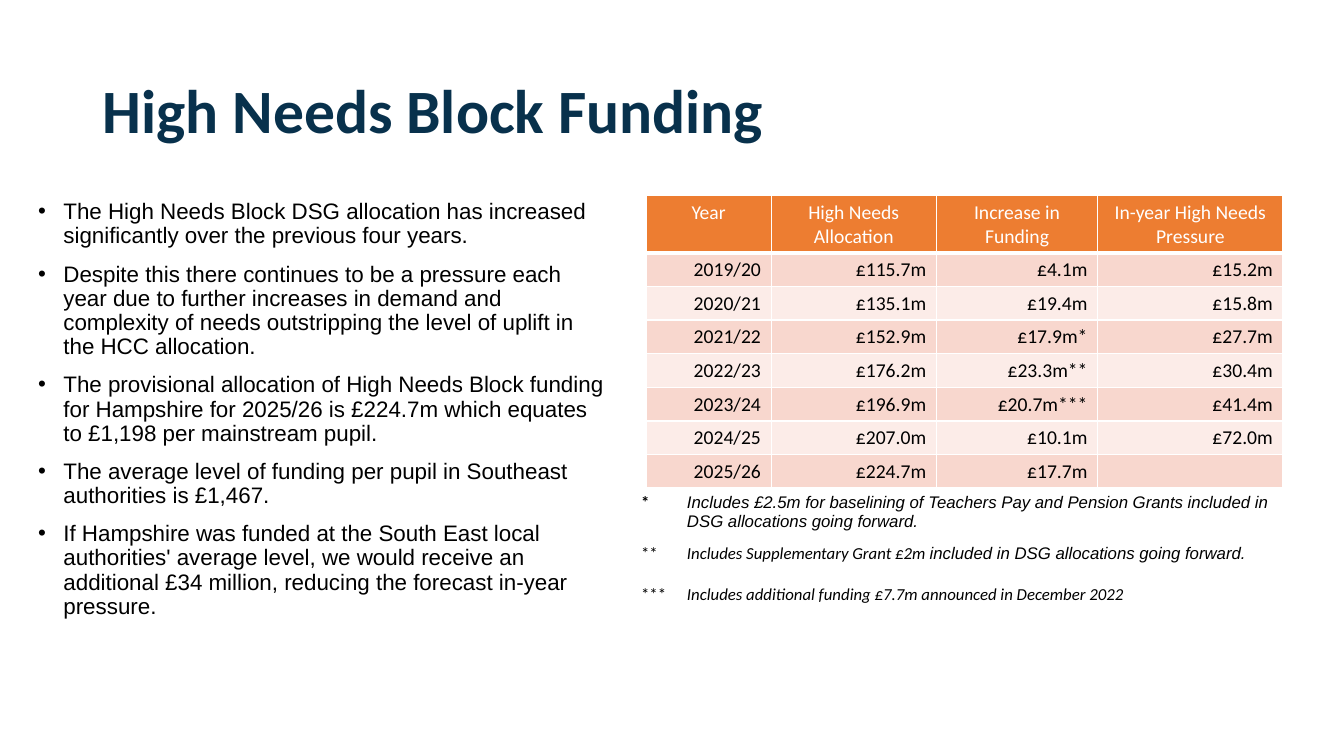
from dataclasses import dataclass

from lxml import etree
from pptx import Presentation
from pptx.dml.color import RGBColor
from pptx.enum import text as t
from pptx.oxml import ns
from pptx.util import Pt

NAVY = RGBColor(0x08, 0x31, 0x4C)
BLACK = RGBColor(0x00, 0x00, 0x00)
WHITE = RGBColor(0xFF, 0xFF, 0xFF)
ORANGE = RGBColor(0xED, 0x7D, 0x31)
BANDS = (RGBColor(0xF8, 0xD7, 0xCE), RGBColor(0xFC, 0xEC, 0xE8))


@dataclass
class Frame:
    left: float
    top: float
    width: float
    height: float

    def lengths(self):
        return [Pt(value) for value in (self.left, self.top, self.width, self.height)]


@dataclass
class Span:
    text: str
    font: str = "Calibri"
    bold: bool = False
    italic: bool = False


@dataclass
class Note:
    mark: Span
    spans: list[Span]


TITLE = Frame(66.2, 28.8, 828, 104.4)
BODY = Frame(20.2, 139.7, 419, 362.9)
FUNDING = Frame(461.5, 139.7, 455, 208.8)
NOTES = Frame(450.7, 348.5, 476, 86.4)

POINTS = [
    "The High Needs Block DSG allocation has increased significantly over the previous four years.",
    "Despite this there continues to be a pressure each year due to further increases in demand and "
    "complexity of needs outstripping the level of uplift in the HCC allocation.",
    "The provisional allocation of High Needs Block funding for Hampshire for 2025/26 is £224.7m "
    "which equates to £1,198 per mainstream pupil.",
    "The average level of funding per pupil in Southeast authorities is £1,467.",
    "If Hampshire was funded at the South East local authorities' average level, we would receive an "
    "additional £34 million, reducing the forecast in-year pressure.",
]
FUNDING_ROWS = [
    ("Year", "High Needs Allocation", "Increase in Funding", "In-year High Needs Pressure"),
    ("2019/20", "£115.7m", "£4.1m", "£15.2m"),
    ("2020/21", "£135.1m", "£19.4m", "£15.8m"),
    ("2021/22", "£152.9m", "£17.9m*", "£27.7m"),
    ("2022/23", "£176.2m", "£23.3m**", "£30.4m"),
    ("2023/24", "£196.9m", "£20.7m***", "£41.4m"),
    ("2024/25", "£207.0m", "£10.1m", "£72.0m"),
    ("2025/26", "£224.7m", "£17.7m", ""),
]
# Notes grouped by table row
NOTE_ROWS = [
    [Note(Span("*", bold=True),
          [Span("Includes £2.5m for baselining of Teachers Pay and Pension Grants included in "
                "DSG allocations going forward.", "Arial", italic=True)])],
    [Note(Span("**"),
          [Span("Includes Supplementary Grant £2m ", italic=True),
           Span("included in DSG allocations going forward.", "Arial", italic=True)]),
     Note(Span("***"),
          [Span("Includes additional funding £7.7m announced in December 2022", italic=True)])],
]


def set_values(target, values: dict) -> None:
    for name, value in values.items():
        setattr(target, name, value)


def add_span(para, span: Span, size: float, color: RGBColor) -> None:
    run = para.add_run()
    run.text = span.text
    set_values(run.font, {"name": span.font, "size": Pt(size),
                          "bold": span.bold, "italic": span.italic})
    run.font.color.rgb = color


def add_box(page, frame: Frame, anchor):
    box = page.shapes.add_textbox(*frame.lengths())
    set_values(box.text_frame, {"word_wrap": True, "vertical_anchor": anchor})
    return box.text_frame


def next_para(text_frame, index: int):
    return text_frame.add_paragraph() if index else text_frame.paragraphs[0]


def add_bullet(para) -> None:
    props = para._p.get_or_add_pPr()
    props.set("marL", str(Pt(18)))
    props.set("indent", str(-Pt(18)))
    etree.SubElement(props, ns.qn("a:buFont")).set("typeface", "Arial")
    etree.SubElement(props, ns.qn("a:buChar")).set("char", "•")


def set_borders(cell, bottom: float) -> None:
    props = cell._tc.get_or_add_tcPr()
    widths = {"a:lnL": 1, "a:lnR": 1, "a:lnT": 1, "a:lnB": bottom}
    for position, (tag, width) in enumerate(widths.items()):
        line = etree.Element(ns.qn(tag), w=str(Pt(width)))
        fill = etree.SubElement(line, ns.qn("a:solidFill"))
        etree.SubElement(fill, ns.qn("a:srgbClr")).set("val", str(WHITE))
        props.insert(position, line)


def add_grid(page, frame: Frame, widths: list[float], heights: list[float]):
    holder = page.shapes.add_table(len(heights), len(widths), *frame.lengths())
    grid = holder.table
    set_values(grid, {"first_row": False, "horz_banding": False})
    for column, width in zip(grid.columns, widths):
        column.width = Pt(width)
    for row, height in zip(grid.rows, heights):
        row.height = Pt(height)
    holder.height = Pt(frame.height)
    for index, row in enumerate(grid.rows):
        for cell in row.cells:
            set_borders(cell, 1 if index else 3)
    return grid


def fill_funding(grid) -> None:
    for index, values in enumerate(FUNDING_ROWS):
        for cell, value in zip(grid.rows[index].cells, values):
            cell.fill.solid()
            cell.fill.fore_color.rgb = BANDS[(index - 1) % 2] if index else ORANGE
            para = cell.text_frame.paragraphs[0]
            para.alignment = t.PP_ALIGN.RIGHT if index else t.PP_ALIGN.CENTER
            if value:
                add_span(para, Span(value), 14, BLACK if index else WHITE)
            else:
                # Keeps the empty cell at the row's text size
                etree.SubElement(para._p, ns.qn("a:endParaRPr")).set("sz", "1400")


def fill_notes(grid) -> None:
    for row, notes in zip(grid.rows, NOTE_ROWS):
        for cell in row.cells:
            cell.fill.background()
        for index, note in enumerate(notes):
            for cell, spans in zip(row.cells, ([note.mark], note.spans)):
                para = next_para(cell.text_frame, index)
                if index:
                    para.space_before = Pt(14.6)
                for span in spans:
                    add_span(para, span, 12, BLACK)


def main() -> None:
    deck = Presentation()
    set_values(deck, {"slide_width": Pt(960), "slide_height": Pt(540)})
    page = deck.slides.add_slide(deck.slide_layouts[6])

    # Title
    title = add_box(page, TITLE, t.MSO_ANCHOR.MIDDLE).paragraphs[0]
    title.line_spacing = 0.9
    add_span(title, Span("High Needs Block Funding", bold=True), 44, NAVY)

    # Funding by year
    fill_funding(add_grid(page, FUNDING, [89.3, 118.1, 115.2, 132.4], [38.9] + [22.3] * 7))

    # Bullet points
    body = add_box(page, BODY, t.MSO_ANCHOR.TOP)
    for index, point in enumerate(POINTS):
        para = next_para(body, index)
        add_bullet(para)
        set_values(para, {"line_spacing": 0.9, "space_before": Pt(10 if index else 0)})
        add_span(para, Span(point, "Arial"), 16, BLACK)

    # Notes to the table
    fill_notes(add_grid(page, NOTES, [32.8, 443.2], [28.8, 28.8]))

    deck.save("out.pptx")


if __name__ == "__main__":
    main()
